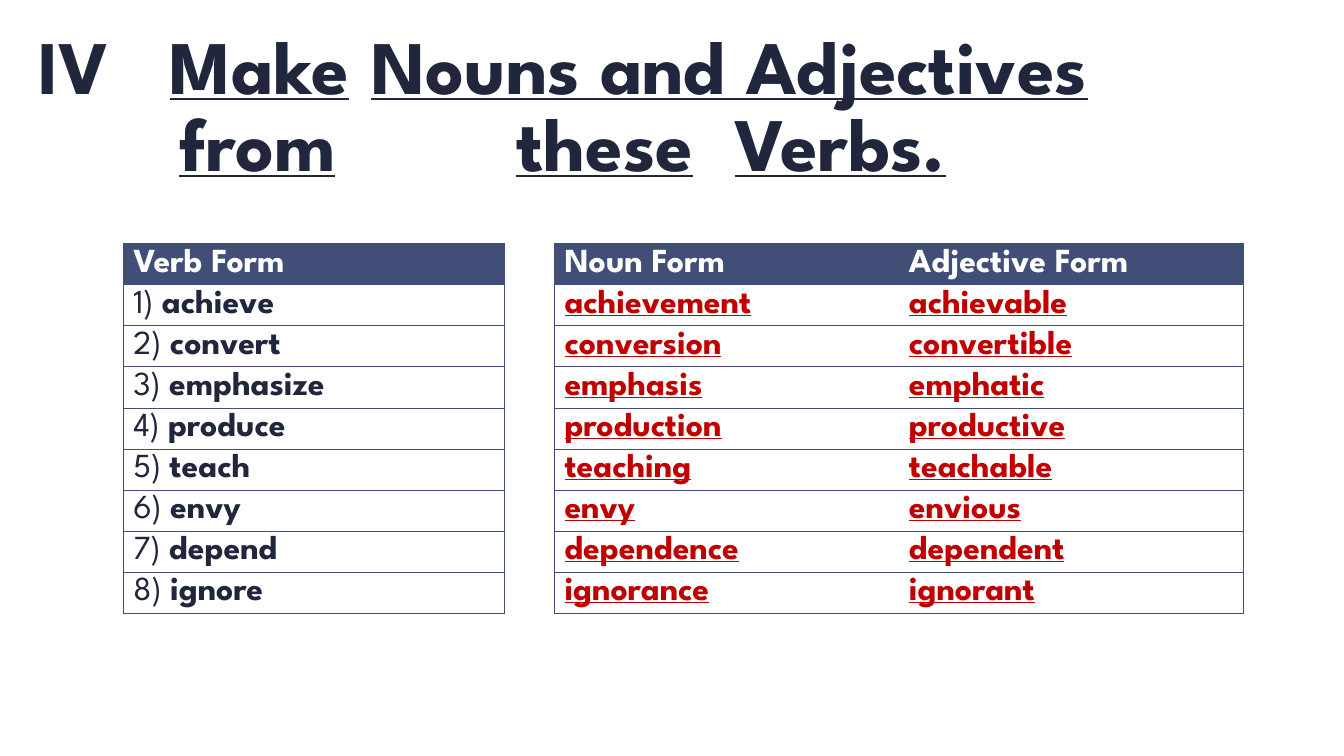
from pptx import Presentation
from pptx.dml.color import RGBColor
from pptx.enum.text import MSO_ANCHOR
from pptx.oxml.ns import qn
from pptx.util import Inches, Pt
from lxml.etree import SubElement

COLORS = {"ink": "20273C", "navy": "414E77", "answer": "C00000", "white": "FFFFFF"}
FONT = "League Spartan"
COLS, ROWS = 160, 90  # slide grid
ROW_H = 4.88          # table row height in grid rows
CELL_LINE = 22.1      # line height in table cells, points

WORDS = [
    ("achieve", "achievement", "achievable"),
    ("convert", "conversion", "convertible"),
    ("emphasize", "emphasis", "emphatic"),
    ("produce", "production", "productive"),
    ("teach", "teaching", "teachable"),
    ("envy", "envy", "envious"),
    ("depend", "dependence", "dependent"),
    ("ignore", "ignorance", "ignorant"),
]


def add_text(p, text, size=24, color="ink", bold=True, underline=False):
    r = p.add_run()
    r.text = text
    r.font.name, r.font.size = FONT, Pt(size)
    r.font.bold, r.font.underline = bold, underline
    r.font.color.rgb = RGBColor.from_string(COLORS[color])


class Deck:
    def __init__(self):
        self.prs = Presentation()
        self.prs.slide_width, self.prs.slide_height = Inches(13.33), Inches(7.5)
        self.s = self.prs.slides.add_slide(self.prs.slide_layouts[6])
        fill = self.s.background.fill
        fill.solid()
        fill.fore_color.rgb = RGBColor.from_string(COLORS["white"])

    def x(self, cols):
        return round(self.prs.slide_width * cols / COLS)

    def y(self, rows):
        return round(self.prs.slide_height * rows / ROWS)

    def title(self, left, top, width, height, lines):
        """Each line is a hanging label and its phrases, keyed by start column."""
        sp = self.s.shapes.add_textbox(self.x(left), self.y(top), self.x(width), self.y(height))
        tf = sp.text_frame
        tf.word_wrap, tf.vertical_anchor = True, MSO_ANCHOR.BOTTOM
        tf.margin_left = tf.margin_right = Inches(0.13)
        tf.margin_top = tf.margin_bottom = Inches(0.07)
        for i, (label, phrases) in enumerate(lines):
            p = tf.add_paragraph() if i else tf.paragraphs[0]
            p.line_spacing = 0.85
            indent, *stops = phrases
            pPr = p._p.get_or_add_pPr()
            pPr.set("marL", str(self.x(indent)))
            tabs = SubElement(pPr, qn("a:tabLst"))
            for stop in stops:
                SubElement(tabs, qn("a:tab"), pos=str(self.x(stop)), algn="l")
            if label:
                pPr.set("indent", str(-self.x(indent)))
                add_text(p, label + "\t", size=54)
            add_text(p, "\t".join(phrases.values()), size=54, underline=True)

    def border(self, cell, side, visible):
        ln = SubElement(cell._tc.get_or_add_tcPr(), qn("a:ln" + side), w=str(Pt(0.5)))
        if visible:
            color = SubElement(SubElement(ln, qn("a:solidFill")), qn("a:srgbClr"))
            color.set("val", COLORS["navy"])
        else:
            SubElement(ln, qn("a:noFill"))

    def cell_text(self, cell, runs):
        p = cell.text_frame.paragraphs[0]
        p.line_spacing = Pt(CELL_LINE)
        for text, style in runs:
            add_text(p, text, **style)
        end = SubElement(p._p, qn("a:endParaRPr"), sz="2400")
        SubElement(end, qn("a:latin"), typeface=FONT)

    def table(self, left, top, col_w, header, body):
        """Each body cell is a list of (text, format) runs."""
        rows = [[[(h, {"color": "white"})] for h in header]] + body
        n = len(header)
        tbl = self.s.shapes.add_table(len(rows), n, self.x(left), self.y(top),
                                      self.x(col_w * n), self.y(ROW_H * len(rows))).table
        tbl.horz_banding = False
        for col in tbl.columns:
            col.width = self.x(col_w)
        for i, row in enumerate(rows):
            tbl.rows[i].height = self.y(ROW_H)
            for j, runs in enumerate(row):
                cell = tbl.cell(i, j)
                self.cell_text(cell, runs)
                # Rules between rows, a frame outside, none between columns
                for side, visible in (("L", j == 0), ("R", j == n - 1), ("T", True), ("B", True)):
                    self.border(cell, side, visible)
                if i == 0:
                    cell.fill.solid()
                    cell.fill.fore_color.rgb = RGBColor.from_string(COLORS["navy"])
                else:
                    cell.fill.background()


def main():
    deck = Deck()

    # Heading
    deck.title(3, 2.1, 152, 21, [
        ("IV", {15.65: "Make", 41.7: "Nouns and Adjectives"}),
        ("", {16.8: "from", 40.1: "these", 66.1: "Verbs."}),
    ])

    # Verbs
    verbs = [[[(f"{i}) ", {"bold": False}), (verb, {})]]
             for i, (verb, _, _) in enumerate(WORDS, 1)]
    deck.table(14.67, 29, 45.4, ["Verb Form"], verbs)

    # Answers
    answer = {"color": "answer", "underline": True}
    forms = [[[(word, answer)] for word in pair] for _, *pair in WORDS]
    deck.table(66, 29, 41, ["Noun Form", "Adjective Form"], forms)

    deck.prs.save("out.pptx")


if __name__ == "__main__":
    main()
